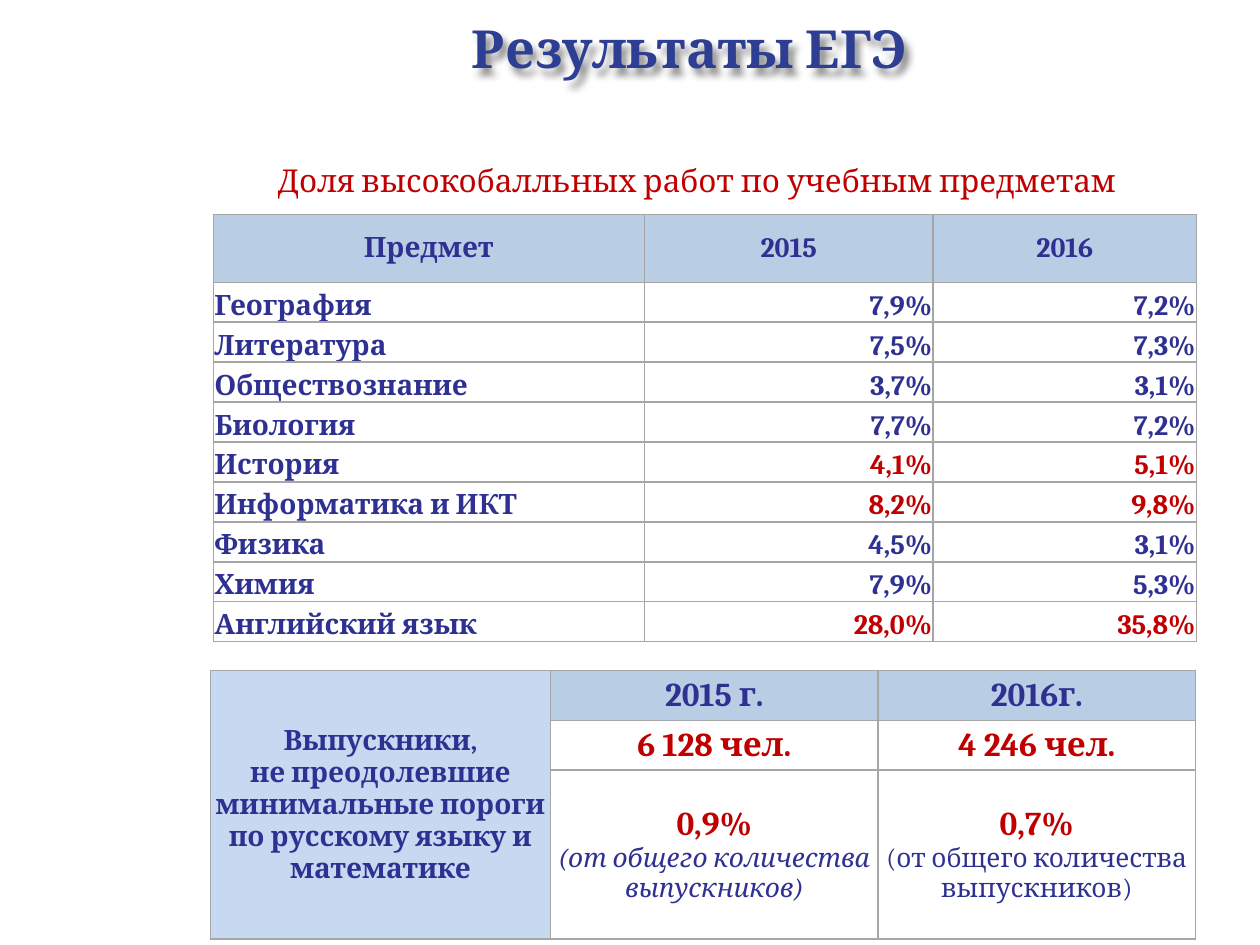
from lxml.etree import SubElement, fromstring
from pptx import Presentation
from pptx.dml.color import RGBColor
from pptx.enum.text import MSO_ANCHOR, MSO_AUTO_SIZE, PP_ALIGN
from pptx.oxml.ns import nsdecls, qn
from pptx.util import Cm, Pt

HUES = {
    "title": "2D3E93",
    "ink": "2E3192",
    "red": "C00000",
    "head": "B9CDE5",
    "side": "C6D9F1",
    "white": "FFFFFF",
    "rule": "A6A6A6",
}
LEFT, MID, RIGHT = PP_ALIGN.LEFT, PP_ALIGN.CENTER, PP_ALIGN.RIGHT


def tint(name):
    return RGBColor.from_string(HUES[name])


class Deck:
    face = "Cambria"

    def __init__(self, wide, high):
        self.prs = Presentation()
        self.prs.slide_width, self.prs.slide_height = Cm(wide), Cm(high)
        self.slide = self.prs.slides.add_slide(self.prs.slide_layouts[5])

    def style(self, para, size, hue="ink", bold=True, slant=False, align=MID):
        para.alignment = align
        font = para.font
        font.name, font.size = self.face, Pt(size)
        font.bold, font.italic = bold, slant
        font.color.rgb = tint(hue)

    def fit(self, shape, text, size, hue, bold):
        frame = shape.text_frame
        frame.word_wrap = True
        frame.auto_size = MSO_AUTO_SIZE.SHAPE_TO_FIT_TEXT
        frame.vertical_anchor = MSO_ANCHOR.TOP
        frame.text = text
        self.style(frame.paragraphs[0], size, hue, bold)

    def title(self, text, box, size):
        shape = self.slide.shapes.title
        shape.left, shape.top, shape.width, shape.height = map(Cm, box)
        self.fit(shape, text, size, "title", True)
        # Soft shadow under the letters
        shape._element.spPr.append(fromstring(
            f'<a:effectLst {nsdecls("a")}><a:outerShdw blurRad="50800" '
            'dist="50800" dir="3600000" algn="tl" rotWithShape="0">'
            '<a:srgbClr val="000000"><a:alpha val="45000"/></a:srgbClr>'
            '</a:outerShdw></a:effectLst>'))

    def label(self, text, box, size, hue):
        shape = self.slide.shapes.add_textbox(*map(Cm, box))
        self.fit(shape, text, size, hue, False)

    def grid(self, left, top, cols, rows):
        shape = self.slide.shapes.add_table(
            len(rows), len(cols), Cm(left), Cm(top),
            Cm(sum(cols)), Cm(sum(rows)))
        table = shape.table
        table.first_row = table.horz_banding = False
        for col, wide in zip(table.columns, cols):
            col.width = Cm(wide)
        for row, high in zip(table.rows, rows):
            row.height = Cm(high)
        for cell in table.iter_cells():
            self.frame(cell)
        return table

    def frame(self, cell):
        cell.margin_left = cell.margin_right = cell.margin_top = Cm(0.02)
        cell.margin_bottom = 0
        props = cell._tc.get_or_add_tcPr()
        for side in ("a:lnL", "a:lnR", "a:lnT", "a:lnB"):
            line = SubElement(props, qn(side), w=str(Pt(1)))
            fill = SubElement(line, qn("a:solidFill"))
            SubElement(fill, qn("a:srgbClr"), val=HUES["rule"])

    def cell(self, cell, lines, fill=None, anchor=MSO_ANCHOR.MIDDLE):
        """Each line is a text and the options of its style."""
        cell.vertical_anchor = anchor
        if fill:
            cell.fill.solid()
            cell.fill.fore_color.rgb = tint(fill)
        else:
            cell.fill.background()
        cell.text_frame.text = "\n".join(text for text, _ in lines)
        for para, (_, look) in zip(cell.text_frame.paragraphs, lines):
            self.style(para, **look)

    def save(self):
        self.prs.save("out.pptx")


# Subject, share in 2015, share in 2016, colour of the shares
MARKS = [
    ("География", "7,9%", "7,2%", "ink"),
    ("Литература", "7,5%", "7,3%", "ink"),
    ("Обществознание", "3,7%", "3,1%", "ink"),
    ("Биология", "7,7%", "7,2%", "ink"),
    ("История", "4,1%", "5,1%", "red"),
    ("Информатика и ИКТ", "8,2%", "9,8%", "red"),
    ("Физика", "4,5%", "3,1%", "ink"),
    ("Химия", "7,9%", "5,3%", "ink"),
    ("Английский язык", "28,0%", "35,8%", "red"),
]
# Year, number of people, share, slanted note
FAILS = [
    ("2015 г.", "6 128 чел.", "0,9%", True),
    ("2016г.", "4 246 чел.", "0,7%", False),
]
SIDE = ["Выпускники,", "не преодолевшие минимальные пороги",
        "по русскому языку и математике"]
NOTE = "(от общего количества выпускников)"


def main():
    deck = Deck(25.4, 19.05)

    # Headings
    deck.title("Результаты ЕГЭ", (4.5, 0.2, 18.8, 1.55), 30)
    deck.label("Доля высокобалльных работ по учебным предметам",
               (3.1, 3.12, 21.9, 1.02), 18, "red")

    # Shares by subject
    table = deck.grid(4.3, 4.32, [8.69, 5.82, 5.31],
                      [1.37] + [0.805] * len(MARKS))
    for col, text in enumerate(("Предмет", "2015", "2016")):
        deck.cell(table.cell(0, col), [(text, {"size": 16})], "head")
    for row, (*texts, hue) in enumerate(MARKS, 1):
        for col, text in enumerate(texts):
            look = {"size": 16, "hue": hue if col else "ink",
                    "align": RIGHT if col else LEFT}
            deck.cell(table.cell(row, col), [(text, look)],
                      anchor=MSO_ANCHOR.BOTTOM)

    # Graduates below the threshold
    table = deck.grid(4.24, 13.52, [6.86, 6.6, 6.4], [1, 1, 2.1])
    table.cell(0, 0).merge(table.cell(2, 0))
    deck.cell(table.cell(0, 0), [(text, {"size": 16}) for text in SIDE],
              "side")
    big = {"size": 19, "hue": "red"}
    for col, (year, count, share, slant) in enumerate(FAILS, 1):
        note = {"size": 15, "bold": False, "slant": slant}
        deck.cell(table.cell(0, col), [(year, {"size": 19})], "head")
        deck.cell(table.cell(1, col), [(count, big)], "white")
        deck.cell(table.cell(2, col), [(share, big), (NOTE, note)], "white")

    deck.save()


if __name__ == "__main__":
    main()
